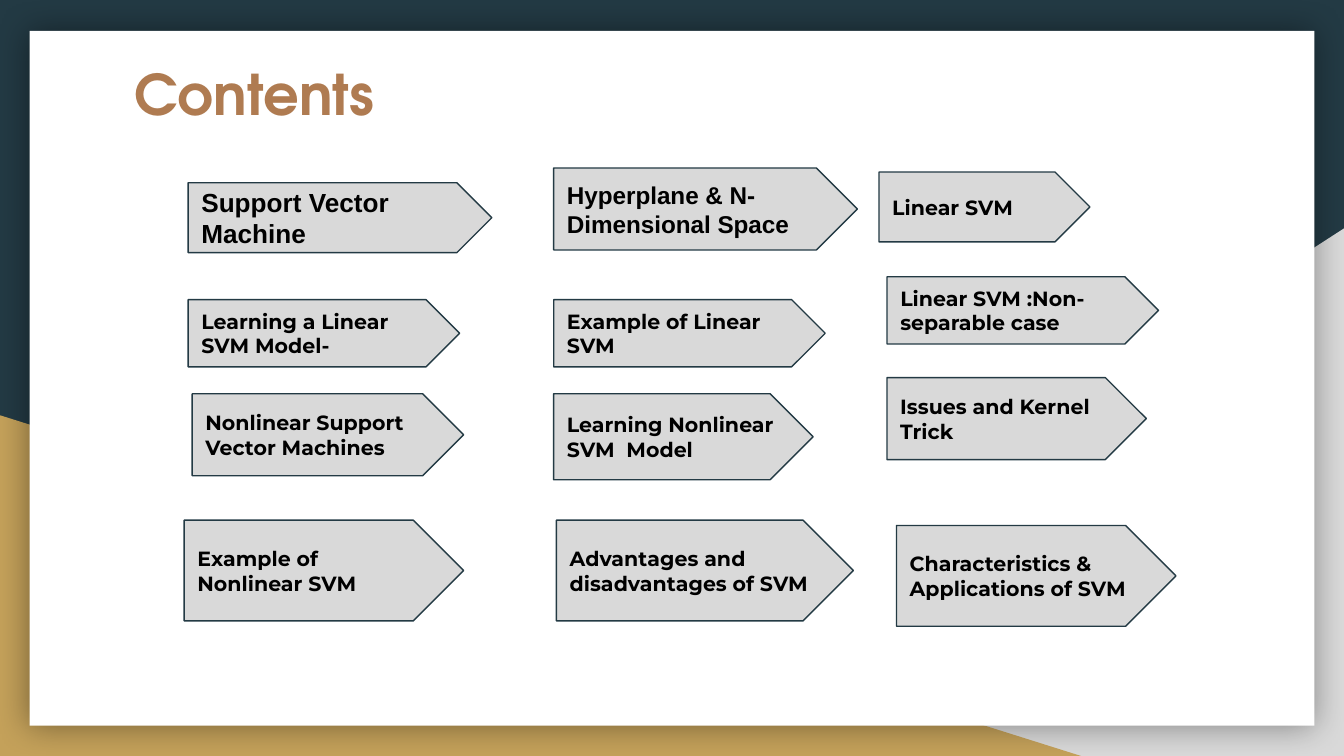
"""Build the contents slide of a talk on support vector machines."""
from lxml.etree import SubElement
from pptx import Presentation
from pptx.dml.color import RGBColor
from pptx.enum.shapes import MSO_SHAPE as Shape
from pptx.enum.text import MSO_ANCHOR as Anchor, PP_ALIGN as Align
from pptx.oxml.ns import qn
from pptx.util import Inches, Pt

NAVY = RGBColor(0x23, 0x3A, 0x44)
GRAY = RGBColor(0xD9, 0xD9, 0xD9)
GOLD = RGBColor(0xC4, 0xA1, 0x5A)
BROWN = RGBColor(0xAF, 0x7B, 0x51)
WHITE = RGBColor(0xFF, 0xFF, 0xFF)
BLACK = RGBColor(0, 0, 0)

TITLE = "Contents"
BODY = ("Montserrat", 11)
TOPICS = [
    ("Support Vector Machine", (1.4, 1.36, 2.26, 0.52), ("Arial", 14)),
    ("Hyperplane & N-Dimensional Space", (4.12, 1.25, 2.26, 0.61), ("Arial", 13)),
    ("Linear SVM", (6.54, 1.28, 1.57, 0.52), BODY),
    ("Learning a Linear SVM Model-", (1.4, 2.23, 2.02, 0.5), BODY),
    ("Example of Linear SVM", (4.12, 2.23, 2.02, 0.5), BODY),
    ("Linear SVM :Non-separable case", (6.6, 2.06, 2.02, 0.5), BODY),
    ("Nonlinear Support Vector Machines", (1.43, 2.93, 2.02, 0.61), BODY),
    ("Learning Nonlinear SVM  Model", (4.12, 2.93, 1.93, 0.64), BODY),
    ("Issues and Kernel Trick", (6.6, 2.81, 1.93, 0.61), BODY),
    ("Example of Nonlinear SVM", (1.37, 3.87, 2.08, 0.75), BODY),
    ("Advantages and disadvantages of SVM", (4.14, 3.87, 2.21, 0.75), BODY),
    ("Characteristics & Applications of SVM", (6.67, 3.91, 2.08, 0.75), BODY),
]


def add_filled(slide, kind, box, color):
    shape = slide.shapes.add_shape(kind, *map(Inches, box))
    shape.shadow.inherit = False
    shape.fill.solid()
    shape.fill.fore_color.rgb = color
    shape.line.fill.background()
    return shape


def add_glow_shadow(shape):
    effects = shape._element.spPr.find(qn("a:effectLst"))
    shadow = SubElement(effects, qn("a:outerShdw"), blurRad=str(Pt(18)),
                        dist="0", dir="0", algn="ctr", rotWithShape="0")
    color = SubElement(shadow, qn("a:srgbClr"), val=str(BLACK))
    SubElement(color, qn("a:alpha"), val="40000")


def write(shape, text, font_name, size, color, anchor):
    frame = shape.text_frame
    frame.word_wrap = True
    frame.vertical_anchor = anchor
    frame.margin_left = frame.margin_right = Inches(0.1)
    frame.margin_top = frame.margin_bottom = Inches(0.1)
    paragraph = frame.paragraphs[0]
    paragraph.text = text
    paragraph.alignment = Align.LEFT
    font = paragraph.font
    font.name, font.size, font.bold = font_name, Pt(size), True
    font.color.rgb = color


def add_backdrop(slide):
    slide.background.fill.solid()
    slide.background.fill.fore_color.rgb = NAVY
    gray_corner = add_filled(slide, Shape.RIGHT_TRIANGLE, (3.92, 1.7, 6.08, 3.93), GRAY)
    gray_corner._element.spPr.find(qn("a:xfrm")).set("flipH", "1")
    add_filled(slide, Shape.RIGHT_TRIANGLE, (0, 3.09, 8.06, 2.54), GOLD)
    card = add_filled(slide, Shape.RECTANGLE, (0.22, 0.23, 9.56, 5.17), WHITE)
    add_glow_shadow(card)


def add_topic(slide, text, box, font):
    arrow = add_filled(slide, Shape.PENTAGON, box, GRAY)
    arrow.adjustments[0] = 0.5
    arrow.line.color.rgb = NAVY
    arrow.line.width = Pt(0.75)
    write(arrow, text, *font, BLACK, Anchor.MIDDLE)


def main():
    deck = Presentation()
    deck.slide_width = Inches(10)
    deck.slide_height = deck.slide_width * 9 // 16
    slide = deck.slides.add_slide(deck.slide_layouts[6])
    add_backdrop(slide)
    heading = slide.shapes.add_textbox(*map(Inches, (0.9, 0.34, 8.21, 0.52)))
    write(heading, TITLE, "TeX Gyre Adventor", 30, BROWN, Anchor.TOP)
    for topic in TOPICS:
        add_topic(slide, *topic)
    deck.save("out.pptx")


if __name__ == "__main__":
    main()
